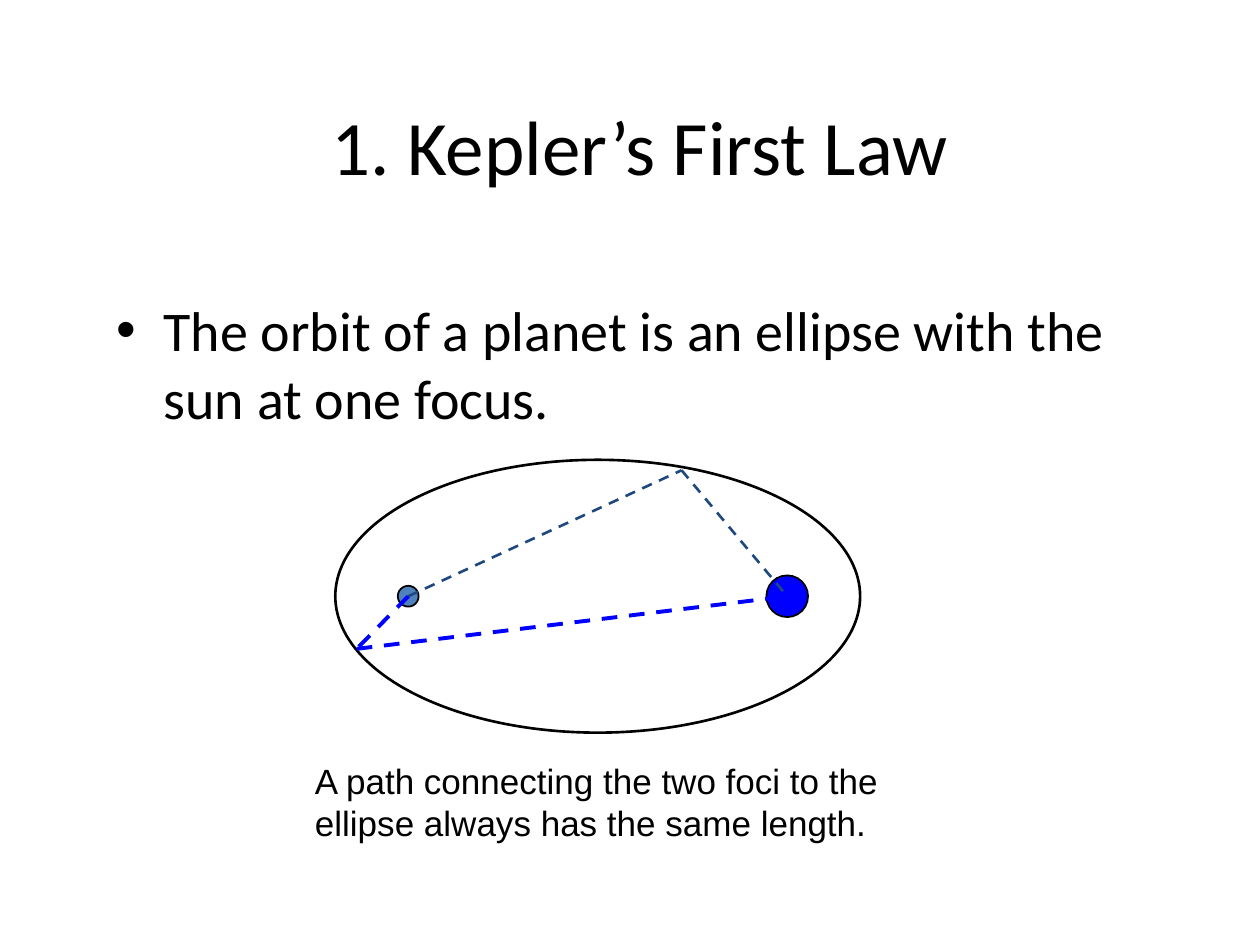
from lxml import etree
from pptx import Presentation
from pptx.dml.color import RGBColor
from pptx.enum.dml import MSO_LINE_DASH_STYLE as Dash
from pptx.enum.shapes import MSO_CONNECTOR as Connector, MSO_SHAPE as Shape
from pptx.enum.text import MSO_ANCHOR as Anchor, MSO_AUTO_SIZE as AutoSize, PP_ALIGN as Align
from pptx.oxml.ns import qn
from pptx.util import Cm, Pt

BLACK = RGBColor(0x00, 0x00, 0x00)
BLUE = RGBColor(0x00, 0x00, 0xFF)
STEEL = RGBColor(0x4F, 0x81, 0xBD)
NAVY = RGBColor(0x1F, 0x49, 0x7D)


def write(frame, text, font, size, align=Align.LEFT):
    frame.word_wrap = True
    frame.text = text
    para = frame.paragraphs[0]
    para.alignment = align
    for span in para.runs:
        span.font.name = font
        span.font.size = Pt(size)
        span.font.color.rgb = BLACK
    return para


def add_title(page, left, top, width, height):
    title = page.shapes.title
    title.left, title.top = Cm(left), Cm(top)
    title.width, title.height = Cm(width), Cm(height)
    title.text_frame.vertical_anchor = Anchor.MIDDLE
    write(title.text_frame, "1. Kepler’s First Law", "Calibri", 44, Align.CENTER)


def add_statement(page, left, top, width, height):
    box = page.shapes.add_textbox(Cm(left), Cm(top), Cm(width), Cm(height))
    para = write(box.text_frame,
                 "The orbit of a planet is an ellipse with the sun at one focus.",
                 "Calibri", 32)
    properties = para._p.get_or_add_pPr()
    properties.set("marL", str(Cm(0.95)))
    properties.set("indent", str(-Cm(0.95)))
    etree.SubElement(properties, qn("a:buFont")).set("typeface", "Arial")
    etree.SubElement(properties, qn("a:buChar")).set("char", "•")


def add_oval(page, left, top, width, height, fill, weight):
    oval = page.shapes.add_shape(Shape.OVAL, Cm(left), Cm(top), Cm(width), Cm(height))
    oval.shadow.inherit = False
    if fill is None:
        oval.fill.background()
    else:
        oval.fill.solid()
        oval.fill.fore_color.rgb = fill
    oval.line.color.rgb = BLACK
    oval.line.width = Pt(weight)


def add_dashed_line(page, start, end, color, weight):
    line = page.shapes.add_connector(Connector.STRAIGHT, *map(Cm, start + end))
    line.line.color.rgb = color
    line.line.width = Pt(weight)
    line.line.dash_style = Dash.DASH
    etree.SubElement(line._element.spPr, qn("a:effectLst"))


def add_orbit(page, left, top, width, height):
    focus_inset = 1.47
    middle = top + height / 2
    empty_focus = (left + focus_inset, middle)
    sun = (left + width - focus_inset, middle)
    upper_point = (left + 6.98, top + 0.21)
    lower_point = (left + 0.43, top + 3.81)

    add_oval(page, left, top, width, height, None, 1.5)
    for (x, y), size, fill in ((empty_focus, 0.42, STEEL), (sun, 0.84, BLUE)):
        add_oval(page, x - size / 2, y - size / 2, size, size, fill, 1)
    for point, color, weight in ((upper_point, NAVY, 1.5), (lower_point, BLUE, 2.25)):
        add_dashed_line(page, empty_focus, point, color, weight)
        add_dashed_line(page, point, sun, color, weight)


def add_caption(page, left, top, width, height):
    box = page.shapes.add_textbox(Cm(left), Cm(top), Cm(width), Cm(height))
    write(box.text_frame,
          "A path connecting the two foci to the ellipse always has the same length.",
          "Arial", 20)
    box.text_frame.auto_size = AutoSize.SHAPE_TO_FIT_TEXT


def main():
    deck = Presentation()
    deck.slide_width, deck.slide_height = Cm(25.4), Cm(19.05)
    page = deck.slides.add_slide(deck.slide_layouts[5])
    add_title(page, 2.1, 1.32, 21.6, 3.18)
    add_statement(page, 2.1, 5.84, 21.6, 11.43)
    add_orbit(page, 6.76, 9.27, 10.58, 5.5)
    add_caption(page, 6.1, 15.19, 12.8, 1.95)
    deck.save("out.pptx")


if __name__ == "__main__":
    main()
